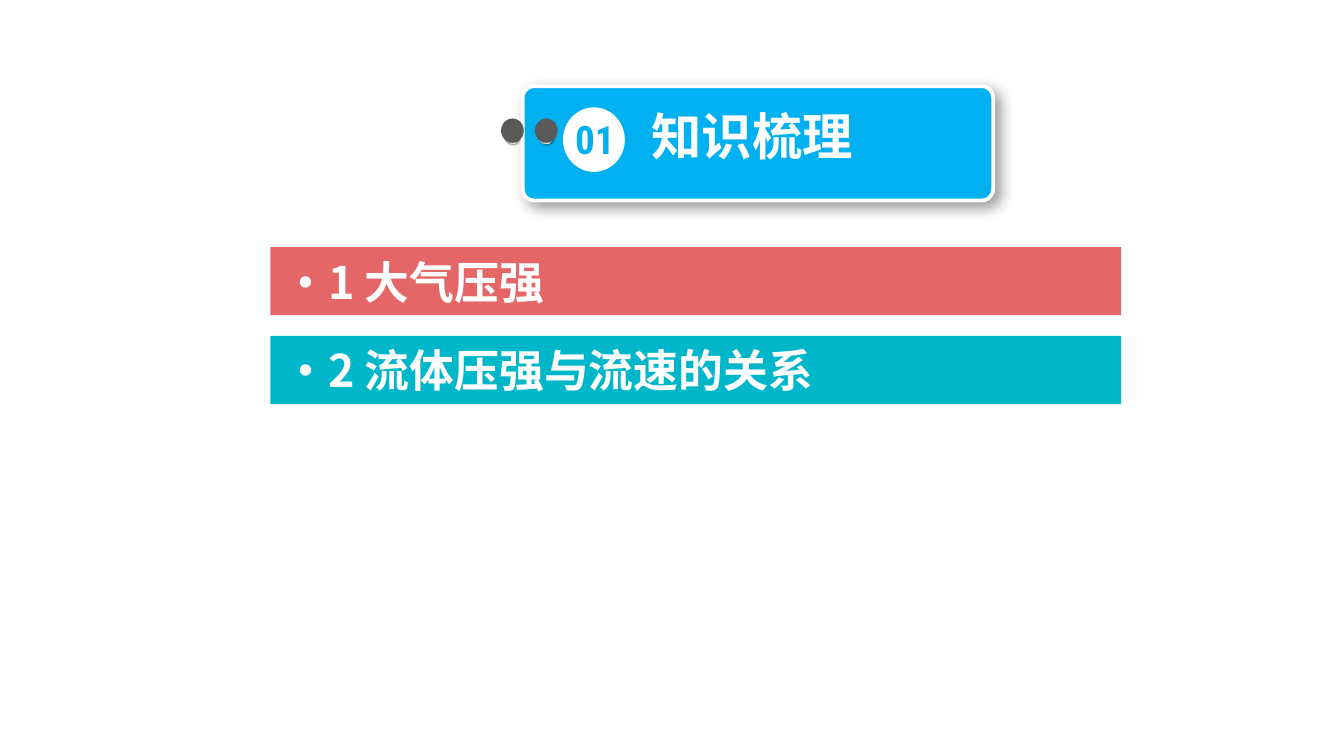
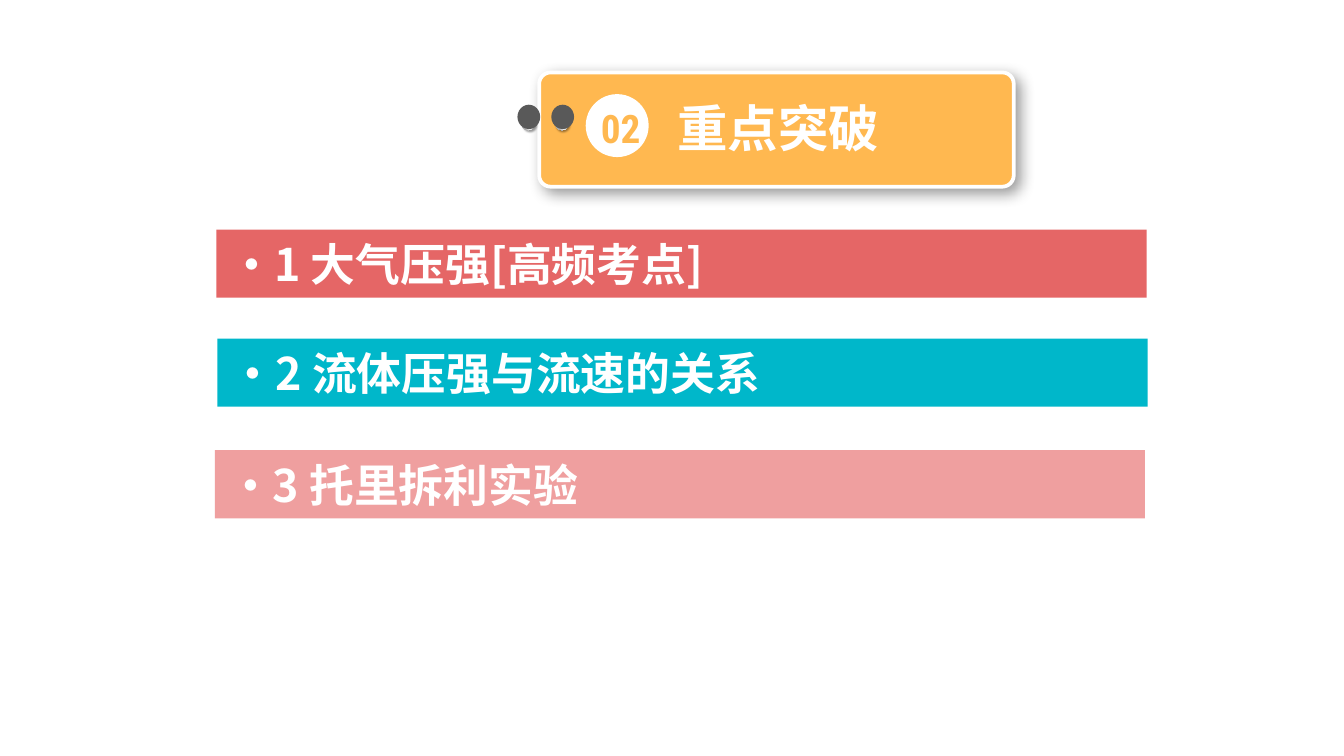
from pptx import Presentation
from pptx.dml.color import RGBColor
from pptx.enum.shapes import MSO_SHAPE as Shape
from pptx.enum.text import MSO_ANCHOR as Anchor, PP_ALIGN as Align
from pptx.oxml import parse_xml
from pptx.oxml.ns import nsdecls
from pptx.util import Cm, Pt

# Shared look
WHITE, KNOB, RED, TEAL, PINK = "FFFFFF", "595959", "E56666", "00B7CA", "EF9F9F"
CJK, CONDENSED = "Noto Sans CJK SC", "Roboto Condensed"
METAL = [(0, "FFFFFF"), (17, "A6A6A6"), (35, "F2F2F2"),
         (55, "A6A6A6"), (75, "F2F2F2"), (100, "A6A6A6")]
KNOB_OFFSETS = (0.23, -0.41)
BAR_HEIGHT = 1.29

# Content: boxes are (left, top, width, height) in cm
SECTIONS = [
    {"number": "01", "title": "知识梳理", "accent": "00B0F0",
     "plate": (9.88, 1.63, 8.89, 2.16), "disc": (10.64, 2.03, 1.17, 1.22),
     "number_box": (10.57, 2.06, 1.35, 1.14), "title_box": (11.4, 1.85, 5.64, 1.42),
     "bar_width": 16.08,
     "topics": [("·1 大气压强", RED, 5.11, 4.67),
                ("·2 流体压强与流速的关系", TEAL, 5.11, 6.35)]},
    {"number": "02", "title": "重点突破", "accent": "FFB850",
     "plate": (10.19, 1.37, 8.97, 2.16), "disc": (11.07, 1.78, 1.19, 1.19),
     "number_box": (11.02, 1.85, 1.42, 1.14), "title_box": (11.56, 1.7, 6.3, 1.42),
     "bar_width": 17.58,
     "topics": [("·1 大气压强[高频考点]", RED, 4.09, 4.34),
                ("·2 流体压强与流速的关系", TEAL, 4.11, 6.4),
                ("·3 托里拆利实验", PINK, 4.06, 8.51)]},
]


def rgb(color):
    return RGBColor.from_string(color)


def add_block(slide, preset, box, color):
    block = slide.shapes.add_shape(preset, *map(Cm, box))
    block.shadow.inherit = False
    block.fill.solid()
    block.fill.fore_color.rgb = rgb(color)
    block.line.fill.background()
    return block


def cast_shadow(block, blur, distance):
    properties = block.element.spPr
    effects = properties.find("{*}effectLst")
    effects.append(parse_xml(
        f'<a:outerShdw {nsdecls("a")} blurRad="{Pt(blur)}" dist="{Pt(distance)}" '
        'dir="2700000" algn="tl" rotWithShape="0"><a:srgbClr val="000000">'
        '<a:alpha val="40000"/></a:srgbClr></a:outerShdw>'))


def polish_metal(block):
    stops = "".join(f'<a:gs pos="{position * 1000}"><a:srgbClr val="{color}"/></a:gs>'
                    for position, color in METAL)
    properties = block.element.spPr
    properties.replace(properties.find("{*}solidFill"), parse_xml(
        f'<a:gradFill {nsdecls("a")} rotWithShape="1"><a:gsLst>{stops}</a:gsLst>'
        '<a:lin ang="2700000" scaled="0"/></a:gradFill>'))


def write(holder, text, size, font, color, align=Align.CENTER):
    frame = holder.text_frame
    frame.word_wrap = True
    frame.vertical_anchor = Anchor.MIDDLE
    frame.margin_top = frame.margin_bottom = 0
    frame.margin_left = frame.margin_right = Cm(0.25)
    paragraph = frame.paragraphs[0]
    paragraph.alignment = align
    run = paragraph.add_run()
    run.text = text
    run.font.size, run.font.bold, run.font.name = Pt(size), True, font
    run.font.color.rgb = rgb(color)
    run.font._element.append(parse_xml(f'<a:ea {nsdecls("a")} typeface="{font}"/>'))


def add_label(slide, box, *text_style):
    write(slide.shapes.add_textbox(*map(Cm, box)), *text_style)


def add_header(slide, section):
    # Plate with white rim
    plate = add_block(slide, Shape.ROUNDED_RECTANGLE, section["plate"], section["accent"])
    plate.adjustments[0] = 0.1
    plate.line.color.rgb = rgb(WHITE)
    plate.line.width = Pt(2)
    cast_shadow(plate, 8, 4)

    # Metal pins under dark knobs
    left, top = section["plate"][:2]
    for offset in KNOB_OFFSETS:
        x, y = left + offset, top + 0.61
        pin = add_block(slide, Shape.OVAL, (x + 0.08, y + 0.23, 0.25, 0.25), WHITE)
        pin.rotation = 270
        polish_metal(pin)
        cast_shadow(pin, 1, 1)
        add_block(slide, Shape.OVAL, (x, y, 0.43, 0.46), KNOB)

    # Number and title
    add_block(slide, Shape.OVAL, section["disc"], WHITE)
    add_label(slide, section["number_box"], section["number"], 21, CONDENSED, section["accent"])
    add_label(slide, section["title_box"], section["title"], 27, CJK, WHITE)


def add_topics(slide, section):
    for topic, color, left, top in section["topics"]:
        bar = add_block(slide, Shape.RECTANGLE,
                        (left, top, section["bar_width"], BAR_HEIGHT), color)
        write(bar, topic, 24, CJK, WHITE, Align.LEFT)


def main():
    deck = Presentation()
    deck.slide_width, deck.slide_height = Cm(25.4), Cm(14.29)
    for section in SECTIONS:
        slide = deck.slides.add_slide(deck.slide_layouts[6])
        add_header(slide, section)
        add_topics(slide, section)
    deck.save("out.pptx")


if __name__ == "__main__":
    main()
